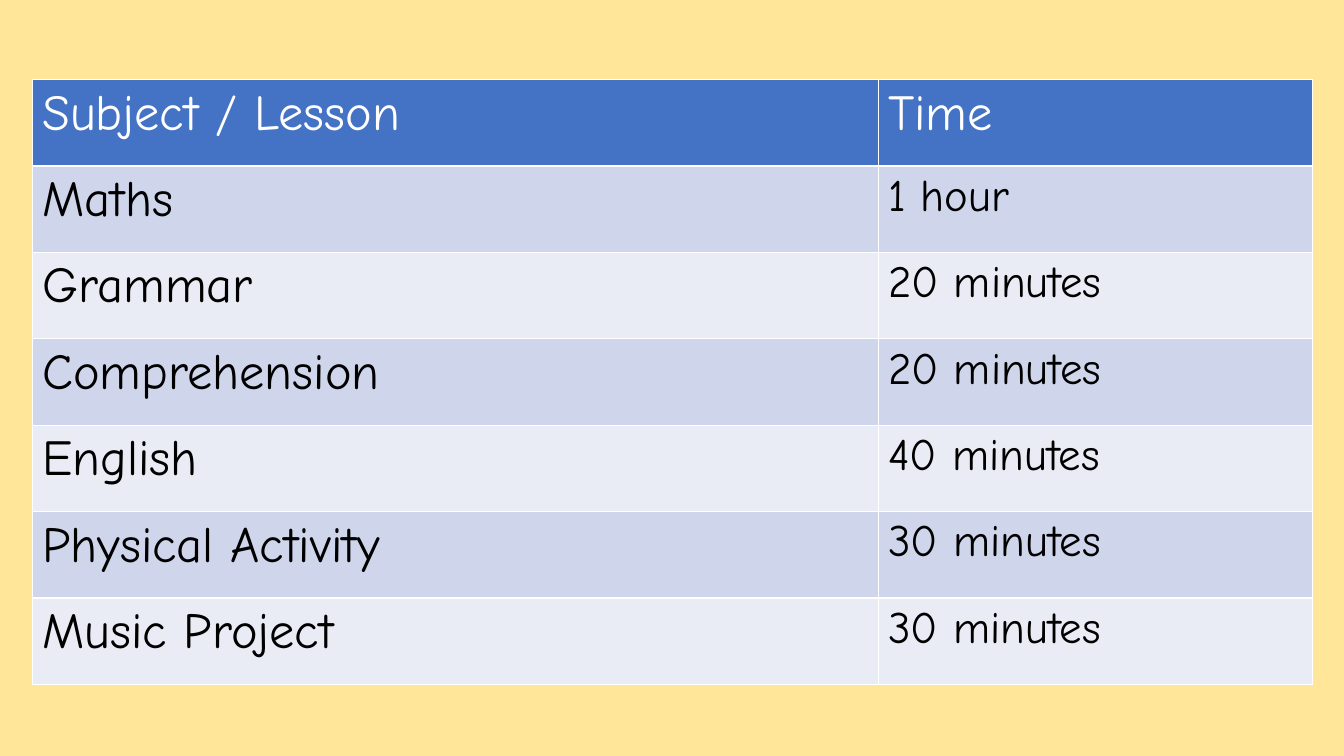
"""Build a lesson timetable slide."""
from dataclasses import dataclass

from pptx import Presentation
from pptx.dml.color import RGBColor
from pptx.util import Inches, Pt

CREAM = RGBColor(0xFF, 0xE6, 0x99)
BLUE = RGBColor(0x44, 0x72, 0xC4)
DARK = RGBColor(0xCF, 0xD5, 0xEA)
LIGHT = RGBColor(0xE9, 0xEB, 0xF5)
WHITE = RGBColor(0xFF, 0xFF, 0xFF)
BLACK = RGBColor(0x00, 0x00, 0x00)
FONT = "Comic Neue"
WIDTHS = (8.39, 4.31)
HEIGHT = 6


@dataclass
class Lesson:
    """One row of the timetable."""
    name: str
    time: str


LESSONS = [
    Lesson("Maths", "1 hour"),
    Lesson("Grammar", "20 minutes"),
    Lesson("Comprehension", "20 minutes"),
    Lesson("English", "40 minutes"),
    Lesson("Physical Activity", "30 minutes"),
    Lesson("Music Project", "30 minutes"),
]


def fill_cell(cell, text: str, fill: RGBColor, color: RGBColor, size: int) -> None:
    """Write styled text on a filled cell."""
    cell.fill.solid()
    cell.fill.fore_color.rgb = fill
    run = cell.text_frame.paragraphs[0].add_run()
    run.text = text
    run.font.color.rgb = color
    style = {"name": FONT, "size": Pt(size), "bold": False}
    for key, value in style.items():
        setattr(run.font, key, value)


def draw_table(slide, lessons: list[Lesson]) -> None:
    """Draw the header and one banded row per lesson."""
    count = len(lessons) + 1
    table = slide.shapes.add_table(
        count, len(WIDTHS), Inches(0.32), Inches(0.79),
        Inches(sum(WIDTHS)), Inches(HEIGHT),
    ).table
    for column, width in zip(table.columns, WIDTHS):
        column.width = Inches(width)
    for row in table.rows:
        row.height = Inches(HEIGHT / count)
    for col, title in enumerate(("Subject / Lesson", "Time")):
        fill_cell(table.cell(0, col), title, BLUE, WHITE, 36)
    for index, lesson in enumerate(lessons, 1):
        band = DARK if index % 2 else LIGHT
        fill_cell(table.cell(index, 0), lesson.name, band, BLACK, 36)
        fill_cell(table.cell(index, 1), lesson.time, band, BLACK, 32)


def main() -> None:
    """Create and save the deck."""
    deck = Presentation()
    deck.slide_width = Inches(13.33)
    deck.slide_height = Inches(7.5)
    slide = deck.slides.add_slide(deck.slide_layouts[6])
    slide.background.fill.solid()
    slide.background.fill.fore_color.rgb = CREAM
    draw_table(slide, LESSONS)
    deck.save("out.pptx")


if __name__ == "__main__":
    main()
